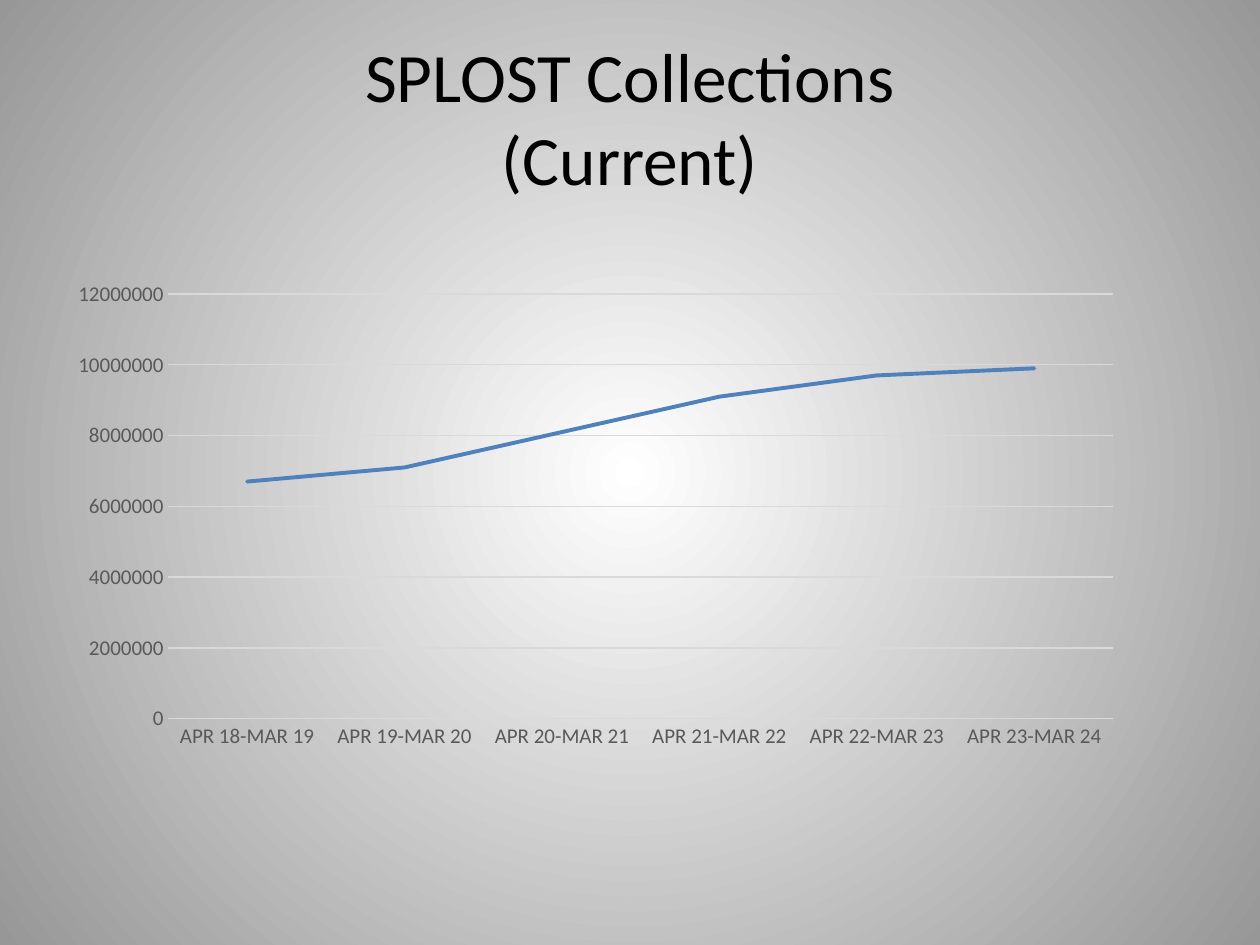
"""Build a slide with a line chart of SPLOST collections by year."""
import lxml.etree
import pptx
import pptx.chart.data
import pptx.dml.color
import pptx.enum.chart
import pptx.enum.text
import pptx.oxml.ns
import pptx.util

color = pptx.dml.color.RGBColor.from_string
qualified = pptx.oxml.ns.qn
THEME = {
    "font": "Calibri",
    "title_size": pptx.util.Pt(39.6),
    "label_size": pptx.util.Pt(12),
    "title": color("000000"),
    "label": color("595959"),
    "grid": color("D9D9D9"),
    "series": color("4F81BD"),
    "background": [color("FFFFFF"), color("979797")],
    "grid_width": pptx.util.Pt(0.75),
    "series_width": pptx.util.Pt(2.25),
}

presentation = pptx.Presentation()
presentation.slide_width = pptx.util.Inches(10)
presentation.slide_height = pptx.util.Inches(7.5)
slide = presentation.slides.add_slide(presentation.slide_layouts[6])
margin = int(presentation.slide_width * 0.05)
content_width = presentation.slide_width - 2 * margin
row = presentation.slide_height // 150

background = slide.background.fill
background.gradient()
for stop, position, shade in zip(background.gradient_stops, (0, 1), THEME["background"]):
    stop.position = position
    stop.color.rgb = shade
gradient = slide.element.find(".//" + qualified("a:gradFill"))
gradient.remove(gradient.find(qualified("a:lin")))
radial = lxml.etree.SubElement(gradient, qualified("a:path"), {"path": "circle"})
lxml.etree.SubElement(
    radial, qualified("a:fillToRect"), dict.fromkeys("ltrb", "50000")
)

title = slide.shapes.add_textbox(margin, 6 * row, content_width, 25 * row)
frame = title.text_frame
frame.word_wrap = True
frame.vertical_anchor = pptx.enum.text.MSO_ANCHOR.MIDDLE
paragraph = frame.paragraphs[0]
paragraph.alignment = pptx.enum.text.PP_ALIGN.CENTER
for index, line in enumerate(("SPLOST Collections", "(Current)")):
    if index:
        paragraph.add_line_break()
    run = paragraph.add_run()
    run.text = line
    run.font.name = THEME["font"]
    run.font.size = THEME["title_size"]
    run.font.color.rgb = THEME["title"]

collections_data = pptx.chart.data.CategoryChartData(number_format="General")
collections_data.categories = [f"APR {year}-MAR {year + 1}" for year in range(18, 24)]
collections_data.add_series(
    "Series 1", (6700000, 7100000, 8100000, 9100000, 9700000, 9900000)
)
chart = slide.shapes.add_chart(
    pptx.enum.chart.XL_CHART_TYPE.LINE,
    margin, 35 * row, content_width, 99 * row, collections_data,
).chart
chart.has_title = False
chart.has_legend = False
chart.font.name = THEME["font"]
chart.font.size = THEME["label_size"]
chart.font.color.rgb = THEME["label"]
chart.plots[0].vary_by_categories = False

series = chart.plots[0].series[0]
series.smooth = False
series.marker.style = pptx.enum.chart.XL_MARKER_STYLE.NONE
series.format.line.color.rgb = THEME["series"]
series.format.line.width = THEME["series_width"]
chart.element.find(".//" + qualified("c:ser")).find(".//" + qualified("a:ln")).set(
    "cap", "rnd"
)

for axis in (chart.category_axis, chart.value_axis):
    axis.major_tick_mark = pptx.enum.chart.XL_TICK_MARK.NONE
    axis.minor_tick_mark = pptx.enum.chart.XL_TICK_MARK.NONE
    axis.tick_labels.font.name = THEME["font"]
    axis.tick_labels.font.size = THEME["label_size"]
    axis.tick_labels.font.color.rgb = THEME["label"]
chart.value_axis.minimum_scale = 0
chart.value_axis.maximum_scale = 12000000
chart.value_axis.major_unit = 2000000
chart.value_axis.format.line.fill.background()
for line in (
    chart.category_axis.format.line,
    chart.value_axis.major_gridlines.format.line,
):
    line.color.rgb = THEME["grid"]
    line.width = THEME["grid_width"]

plot_area = chart.element.find(".//" + qualified("c:plotArea"))
for old_layout in plot_area.findall(qualified("c:layout")):
    plot_area.remove(old_layout)
layout = lxml.etree.Element(qualified("c:layout"))
plot_area.insert(0, layout)
manual_layout = lxml.etree.SubElement(layout, qualified("c:manualLayout"))
for tag, value in (
    ("layoutTarget", "inner"), ("xMode", "edge"), ("yMode", "edge"),
    ("x", "0.093"), ("y", "0.118"), ("w", "0.833"), ("h", "0.681"),
):
    lxml.etree.SubElement(manual_layout, qualified("c:" + tag), val=value)

presentation.save("out.pptx")
